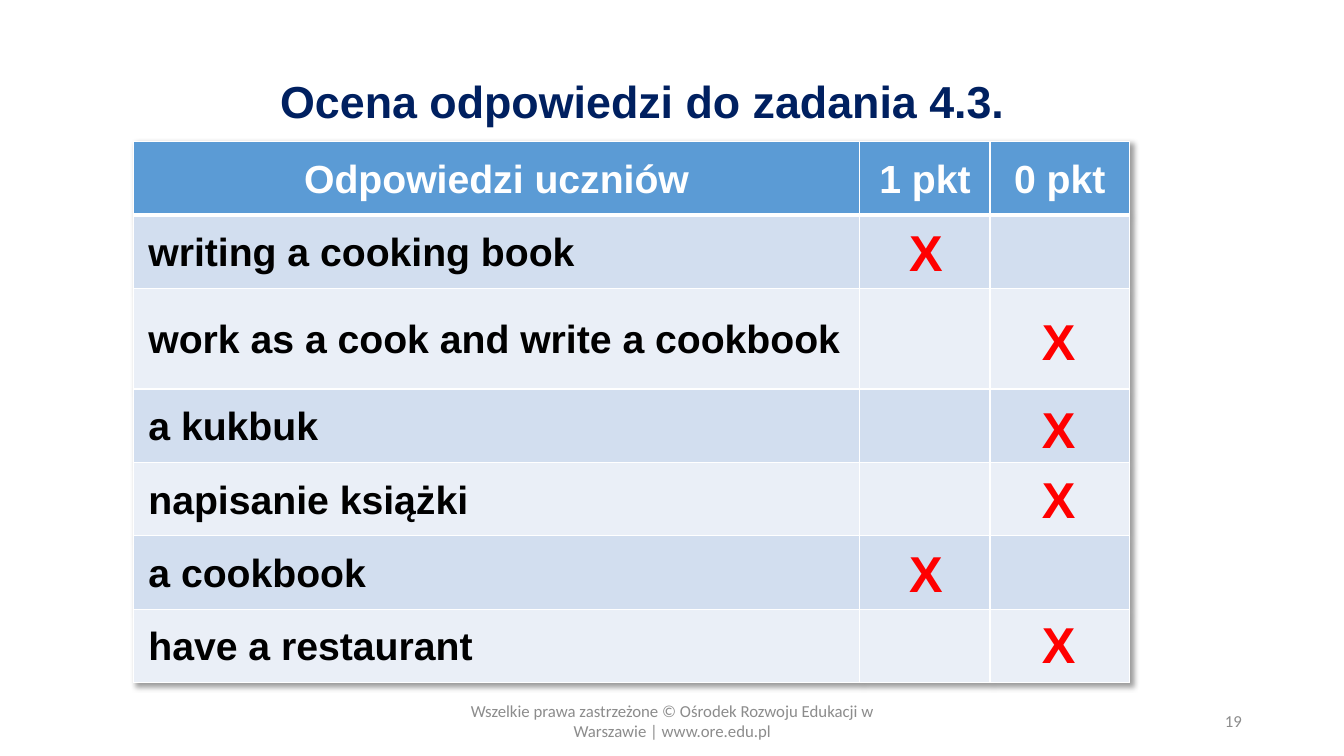
from lxml.etree import SubElement, fromstring
from pptx import Presentation
from pptx.dml.color import RGBColor
from pptx.enum.text import MSO_ANCHOR, PP_ALIGN
from pptx.oxml.ns import nsdecls, qn
from pptx.util import Cm, Pt

NAVY = RGBColor(0x00, 0x20, 0x60)
GRAY = RGBColor(0x8C, 0x8C, 0x8C)
RED = RGBColor(0xFF, 0x00, 0x00)
BLACK = RGBColor(0x00, 0x00, 0x00)
WHITE = RGBColor(0xFF, 0xFF, 0xFF)
HEADER_BLUE = RGBColor(0x5B, 0x9B, 0xD5)
BANDS = RGBColor(0xD2, 0xDE, 0xEF), RGBColor(0xEA, 0xEF, 0xF7)

HEADERS = ["Odpowiedzi uczniów", "1 pkt", "0 pkt"]
MARK_LEFTS = {1: 22.66, 0: 26.01}
# Answer, points awarded, top of the mark in cm
ANSWERS = [
    ("writing a cooking book", 1, 5.44),
    ("work as a cook and write a cookbook", 0, 7.7),
    ("a kukbuk", 0, 9.91),
    ("napisanie książki", 0, 11.66),
    ("a cookbook", 1, 13.54),
    ("have a restaurant", 0, 15.32),
]
COLUMN_WIDTHS = [18.31, 3.28, 3.51]
ROW_HEIGHTS = [1.85, 1.85, 2.54, 1.85, 1.85, 1.85, 1.85]

TITLE = {"name": "Arial", "size": Pt(32), "bold": True}
CELL = {"name": "Arial", "size": Pt(28), "bold": True}
MARK = {"name": "Arial", "size": Pt(36), "bold": True}
FOOTER = {"name": "Calibri", "size": Pt(12), "bold": False}

TABLE_SHADOW = (
    f'<a:effectLst {nsdecls("a")}>'
    '<a:outerShdw blurRad="50800" dist="38100" dir="2700000" algn="tl" rotWithShape="0">'
    '<a:srgbClr val="000000"><a:alpha val="40000"/></a:srgbClr>'
    '</a:outerShdw></a:effectLst>'
)


class SlideBuilder:
    def __init__(self, slide):
        self.slide = slide

    def fill_text(self, frame, text, style, color, alignment=PP_ALIGN.LEFT, spacing=1.0):
        paragraph = frame.paragraphs[0]
        paragraph.alignment = alignment
        paragraph.line_spacing = spacing
        run = paragraph.add_run()
        run.text = text
        for name, value in style.items():
            setattr(run.font, name, value)
        run.font.color.rgb = color
        return paragraph

    def text_box(self, box, text, style, color, anchor=MSO_ANCHOR.MIDDLE, **layout):
        shape = self.slide.shapes.add_textbox(*map(Cm, box))
        shape.text_frame.word_wrap = True
        shape.text_frame.vertical_anchor = anchor
        self.fill_text(shape.text_frame, text, style, color, **layout)

    def borders(self, cell, top, bottom):
        """Draw white cell borders; top and bottom widths are in points."""
        properties = cell._tc.get_or_add_tcPr()
        for tag, width in {"lnL": 1, "lnR": 1, "lnT": top, "lnB": bottom}.items():
            line = SubElement(properties, qn(f"a:{tag}"), w=str(Pt(width)))
            fill = SubElement(line, qn("a:solidFill"))
            SubElement(fill, qn("a:srgbClr"), val=str(WHITE))

    def cell(self, cell, row, text):
        self.borders(cell, 3 if row == 1 else 1, 3 if row == 0 else 1)
        cell.fill.solid()
        cell.fill.fore_color.rgb = BANDS[(row - 1) % 2] if row else HEADER_BLUE
        layout = {
            "vertical_anchor": MSO_ANCHOR.MIDDLE,
            "margin_left": Cm(0.18), "margin_right": Cm(0.18),
            "margin_top": 0, "margin_bottom": 0,
        }
        for name, value in layout.items():
            setattr(cell, name, value)
        if not text:
            return
        color, alignment = (BLACK, PP_ALIGN.JUSTIFY) if row else (WHITE, PP_ALIGN.CENTER)
        paragraph = self.fill_text(cell.text_frame, text, CELL, color, alignment, 1.07)
        if row:
            paragraph._p.get_or_add_pPr().set("marL", str(Cm(0.2)))

    def table(self, left, top, rows):
        frame = self.slide.shapes.add_table(
            len(rows), len(COLUMN_WIDTHS), Cm(left), Cm(top),
            Cm(sum(COLUMN_WIDTHS)), Cm(sum(ROW_HEIGHTS)))
        table = frame.table
        table._tbl.tblPr.insert(0, fromstring(TABLE_SHADOW))
        for column, width in zip(table.columns, COLUMN_WIDTHS):
            column.width = Cm(width)
        for row, height in zip(table.rows, ROW_HEIGHTS):
            row.height = Cm(height)
        for row, texts in enumerate(rows):
            for column, text in enumerate(texts):
                self.cell(table.cell(row, column), row, text)


def main():
    presentation = Presentation()
    presentation.slide_width = Cm(33.87)
    presentation.slide_height = Cm(19.05)
    builder = SlideBuilder(presentation.slides.add_slide(presentation.slide_layouts[6]))

    builder.text_box((6.81, 0.79, 19.23, 3.68), "Ocena odpowiedzi do zadania 4.3.",
                     TITLE, NAVY, spacing=0.9)
    builder.text_box(
        (11.23, 17.65, 11.43, 1.02),
        "Wszelkie prawa zastrzeżone © Ośrodek Rozwoju Edukacji w Warszawie | www.ore.edu.pl",
        FOOTER, GRAY, alignment=PP_ALIGN.CENTER)
    builder.text_box((23.93, 17.65, 7.62, 1.02), "19", FOOTER, GRAY, alignment=PP_ALIGN.RIGHT)
    builder.table(3.36, 3.56, [HEADERS] + [[answer, "", ""] for answer, _, _ in ANSWERS])
    for _, points, top in ANSWERS:
        builder.text_box((MARK_LEFTS[points], top, 1.27, 1.8), "X", MARK, RED,
                         anchor=MSO_ANCHOR.TOP)

    presentation.save("out.pptx")


if __name__ == "__main__":
    main()
